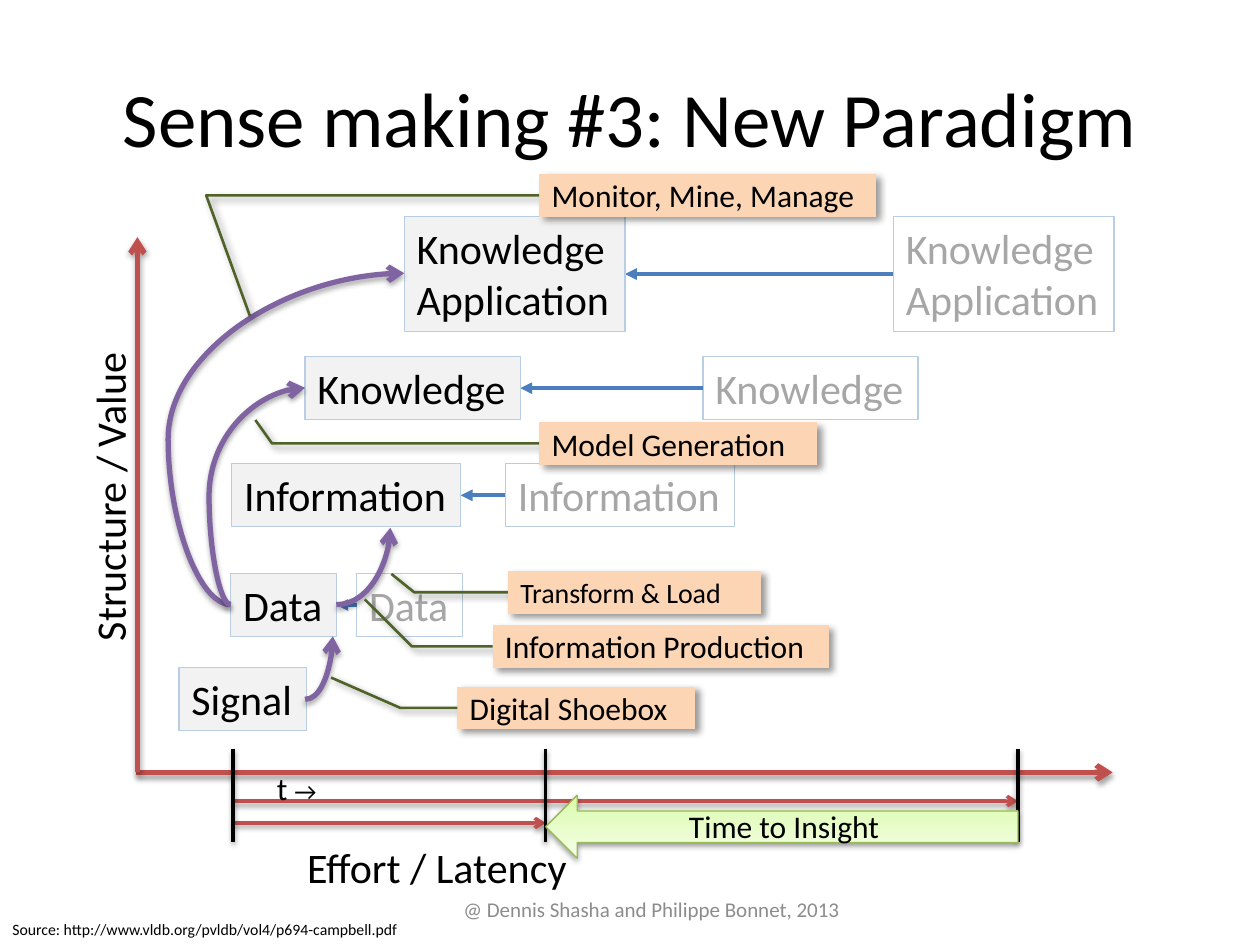
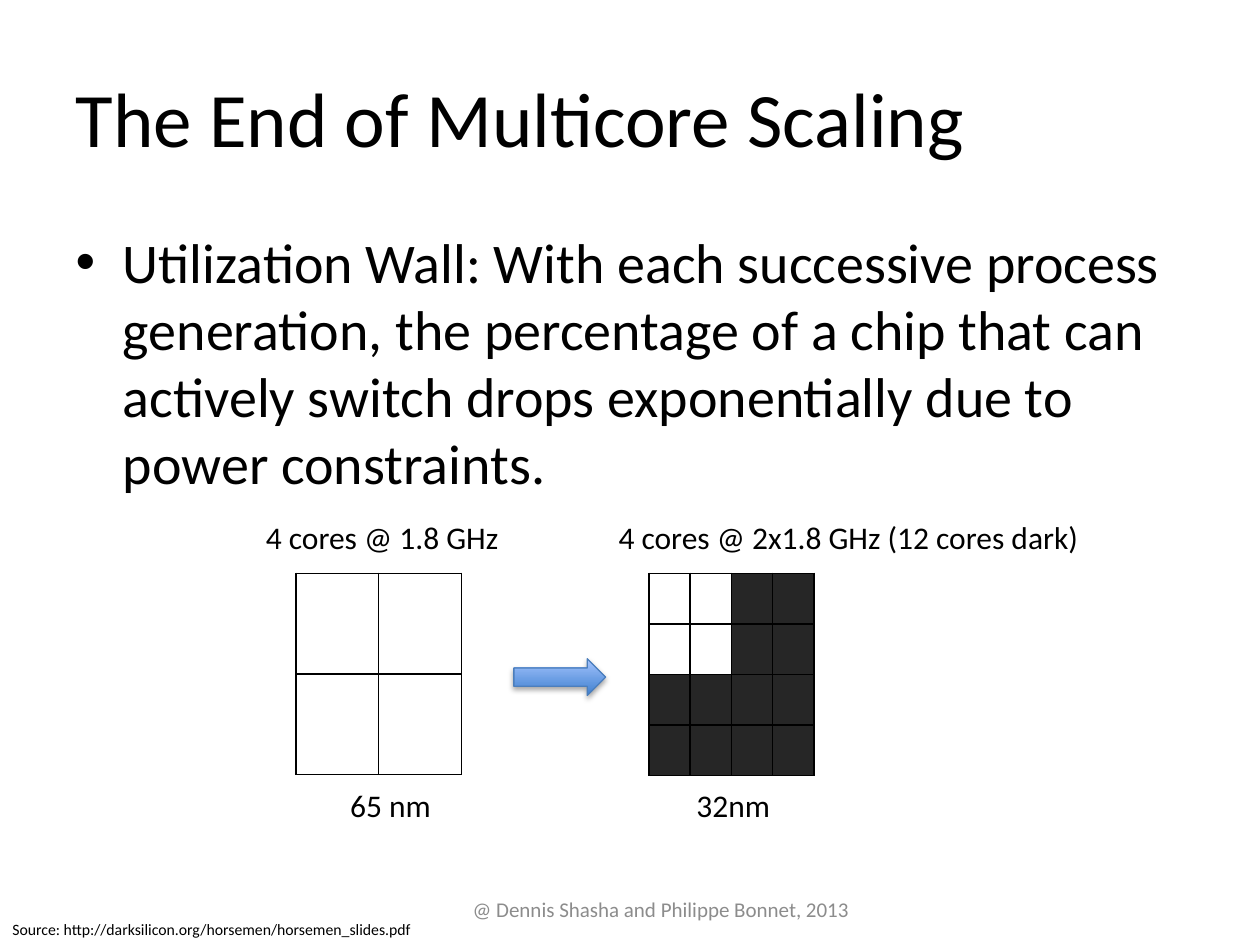
"""Build two slides: a sense making diagram and the end of multicore scaling."""
from copy import deepcopy
from typing import Any, NamedTuple, Optional

from lxml import etree
from pptx import Presentation
from pptx import util as u
from pptx.dml.color import RGBColor
from pptx.enum import shapes as s, text as t
from pptx.oxml.ns import qn

FONT = "Calibri"
BLACK = RGBColor(0x00, 0x00, 0x00)
GREY = RGBColor(0x8C, 0x8C, 0x8C)
FADED = RGBColor(0xA6, 0xA6, 0xA6)
PALE = RGBColor(0xF2, 0xF2, 0xF2)
EDGE = RGBColor(0xB9, 0xCD, 0xE5)
RED = RGBColor(0xC0, 0x50, 0x4D)
BLUE = RGBColor(0x4B, 0x7E, 0xBC)
PURPLE = RGBColor(0x80, 0x64, 0xA2)
PEACH = RGBColor(0xFC, 0xD5, 0xB5)
OLIVE = RGBColor(0x4F, 0x62, 0x28)
LEAF = RGBColor(0x98, 0xB9, 0x55)
DARK = RGBColor(0x26, 0x26, 0x26)
LIME = [(0, RGBColor(0xDA, 0xFD, 0xA7)), (0.35, RGBColor(0xE4, 0xFC, 0xC2)),
        (1, RGBColor(0xF5, 0xFF, 0xE7))]
SKY = [(0, RGBColor(0x3F, 0x80, 0xCE)), (1, RGBColor(0xA4, 0xC4, 0xFF))]

LEFT, MID = t.PP_ALIGN.LEFT, t.PP_ALIGN.CENTER
TOP, CENTRE = t.MSO_ANCHOR.TOP, t.MSO_ANCHOR.MIDDLE


class Box(NamedTuple):
    x: float
    y: float
    w: float
    h: float


class Shade(NamedTuple):
    alpha: int
    blur: float
    dist: float
    turn: int


class Stage(NamedTuple):
    text: str
    box: Box
    ghost: Optional[float] = None


class Line(NamedTuple):
    x1: float
    y1: float
    x2: float
    y2: float
    color: RGBColor
    width: float
    head: Optional[str] = None
    shade: Optional[Shade] = None
    curve: Optional[str] = None
    bend: Optional[float] = None


class Note(NamedTuple):
    text: str
    x: float
    y: float
    w: float
    elbow: float
    tip: tuple[float, float]
    size: int = 18


class Label(NamedTuple):
    text: str
    box: Box
    size: int = 18
    turn: int = 0


SOFT = Shade(35, 3.1, 1.8, 90)
FIRM = Shade(38, 3.1, 1.6, 90)
CAST = Shade(40, 4, 3, 45)

STAGES = [
    Stage("Signal", Box(3.61, 13.46, 2.57, 1.27)),
    Stage("Data", Box(4.65, 11.56, 2.13, 1.27), 7.19),
    Stage("Information", Box(4.67, 9.35, 4.62, 1.27), 10.19),
    Stage("Knowledge", Box(6.15, 7.19, 4.34, 1.27), 14.17),
    Stage("Knowledge\nApplication", Box(8.15, 4.37, 4.45, 2.31), 18.01),
]
START, NOW, END = 4.7, 11, 20.52
AXES = [
    Line(2.74, 15.57, 22.43, 15.57, RED, 3, "arrow", SOFT),
    Line(2.77, 15.57, 2.77, 4.78, RED, 3, "arrow", SOFT),
]
SPANS = [Line(START, y, x, y, RED, 2, "arrow", FIRM)
         for x, y in ((END, 16.15), (NOW, 16.59))]
TICKS = [Line(x, 15.09, x, 16.97, BLACK, 2, None, FIRM) for x in (START, NOW, END)]
CURVES = [Line(*ends, PURPLE, 3, "arrow", SOFT, kind, bend) for ends, kind, bend in (
    ((6.15, 14.1, 6.71, 12.83), "curvedConnector2", None),
    ((6.78, 12.19, 7.87, 10.64), "curvedConnector2", None),
    ((4.65, 12.19, 8.15, 5.51), "curvedConnector3", -0.36),
    ((4.65, 12.19, 6.15, 7.82), "curvedConnector3", -0.29),
)]
NOTES = [
    Note("Digital Shoebox", 9.22, 13.84, 4.8, -0.24, (-0.21, -0.53)),
    Note("Information Production", 9.93, 12.6, 6.78, -0.24, (-0.6, -0.38)),
    Note("Monitor, Mine, Manage", 10.87, 3.51, 6.78, -0.99, (3.33, -0.86)),
    Note("Transform & Load", 10.24, 11.51, 5.11, -0.37, (0.07, -0.46), 16),
    Note("Model Generation", 10.87, 8.51, 5.61, -0.96, (-0.05, -1.02)),
]
NAMES = [
    Label("Structure / Value", Box(-0.99, 9.35, 6.38, 1.27), 24, 270),
    Label("Effort / Latency", Box(5.94, 16.84, 5.82, 1.27), 24),
    Label("Time to Insight", Box(13.64, 16.15, 4.57, 1.02)),
]
CHIPS = [
    Label("65 nm", Box(6.81, 15.72, 2.16, 1.02)),
    Label("32nm", Box(13.79, 15.72, 2.01, 1.02)),
    Label("4 cores @ 1.8 GHz", Box(5.11, 10.31, 5.26, 1.02)),
    Label("4 cores @ 2x1.8 GHz (12 cores dark)", Box(12.22, 10.31, 9.91, 1.02)),
]


def put(item: Any, **form: Any) -> None:
    """Set each format value as an attribute of the item."""
    for key, val in form.items():
        setattr(item, key, val)


def place(box: Box) -> list[u.Length]:
    """Turn a box into lengths."""
    return [u.Cm(val) for val in box]


def write(item: Any, words: str, size: float, color: RGBColor = BLACK,
          align: Any = LEFT, anchor: Any = TOP, wrap: bool = False) -> None:
    """Fill a shape with formatted text, one paragraph a line."""
    frame = item.text_frame
    frame.text = words
    put(frame, word_wrap=wrap, vertical_anchor=anchor)
    for para in frame.paragraphs:
        para.alignment = align
        for run in para.runs:
            put(run.font, name=FONT, size=u.Pt(size))
            run.font.color.rgb = color


def cast(item: Any, shade: Optional[Shade]) -> None:
    """Replace the inherited shadow by the given one or by none."""
    effects = etree.SubElement(item.element.spPr, qn("a:effectLst"))
    if shade:
        outer = etree.SubElement(
            effects, qn("a:outerShdw"), blurRad=str(u.Pt(shade.blur)),
            dist=str(u.Pt(shade.dist)), dir=str(shade.turn * 60000), rotWithShape="0")
        color = etree.SubElement(outer, qn("a:srgbClr"), val=str(BLACK))
        etree.SubElement(color, qn("a:alpha"), val=str(shade.alpha * 1000))


def stroke(line: Any, color: RGBColor, width: float) -> None:
    """Colour a line and set its width."""
    line.color.rgb = color
    line.width = u.Pt(width)


def form(slide: Any, kind: Any, box: Box, fill: Any, edge: RGBColor,
         width: float = 0.75, shade: Optional[Shade] = None) -> Any:
    """Add a preset shape with a plain, graded or empty fill."""
    item = slide.shapes.add_shape(kind, *place(box))
    if fill is None:
        item.fill.background()
    elif isinstance(fill, list):
        item.fill.gradient()
        item.fill.gradient_angle = 90
        stops = item.element.spPr.find(".//" + qn("a:gsLst"))
        for _ in fill[2:]:
            stops.append(deepcopy(stops[-1]))
        for stop, (pos, color) in zip(item.fill.gradient_stops, fill):
            stop.position = pos
            stop.color.rgb = color
    else:
        item.fill.solid()
        item.fill.fore_color.rgb = fill
    stroke(item.line, edge, width)
    cast(item, shade)
    return item


def link(slide: Any, line: Line) -> None:
    """Add a straight or curved connector."""
    kind = s.MSO_CONNECTOR.CURVE if line.curve else s.MSO_CONNECTOR.STRAIGHT
    item = slide.shapes.add_connector(kind, *[u.Cm(val) for val in line[:4]])
    stroke(item.line, line.color, line.width)
    props = item.element.spPr
    if line.head:
        etree.SubElement(props.find(qn("a:ln")), qn("a:tailEnd"), type=line.head)
    if line.curve:
        shape = props.find(qn("a:prstGeom"))
        shape.set("prst", line.curve)
        if line.bend is not None:
            etree.SubElement(shape.find(qn("a:avLst")), qn("a:gd"), name="adj1",
                             fmla=f"val {round(line.bend * 100000)}")
    cast(item, line.shade)


def label(slide: Any, part: Label, **look: Any) -> Any:
    """Add a text box."""
    item = slide.shapes.add_textbox(*place(part.box))
    write(item, part.text, part.size, **look)
    item.rotation = part.turn
    return item


def stage(slide: Any, part: Stage) -> None:
    """Add a stage, its faded former place and the arrow between them."""
    box = part.box
    if part.ghost is not None:
        ghost = form(slide, s.MSO_SHAPE.RECTANGLE, box._replace(x=part.ghost), None, EDGE)
        write(ghost, part.text, 24, FADED)
        mid = box.y + box.h / 2
        link(slide, Line(part.ghost, mid, box.x + box.w, mid, BLUE, 2.25, "triangle"))
    write(form(slide, s.MSO_SHAPE.RECTANGLE, box, PALE, EDGE), part.text, 24)


def note(slide: Any, part: Note) -> None:
    """Add a callout with a bent leader."""
    item = form(slide, s.MSO_SHAPE.LINE_CALLOUT_2_NO_BORDER,
                Box(part.x, part.y, part.w, 0.86), PEACH, OLIVE, 1.5, CAST)
    for i, val in enumerate((0.5, 0, 0.5, part.elbow, *part.tip)):
        item.adjustments[i] = val
    write(item, part.text, part.size, anchor=CENTRE, wrap=True)


def chip(slide: Any, x: float, count: int, lit: int) -> None:
    """Add a square grid of cores, all dark beyond the lit corner."""
    box = Box(x, 11.56, 3.33, 4.06)
    grid = slide.shapes.add_table(count, count, *place(box)).table
    put(grid, first_row=False, horz_banding=False)
    for col in grid.columns:
        col.width = u.Cm(box.w / count)
    for r, row in enumerate(grid.rows):
        row.height = u.Cm(box.h / count)
        for c, cell in enumerate(row.cells):
            props = cell._tc.get_or_add_tcPr()
            for side in "LRTB":
                line = etree.SubElement(props, qn(f"a:ln{side}"), w=str(u.Pt(1)))
                fill = etree.SubElement(line, qn("a:solidFill"))
                etree.SubElement(fill, qn("a:srgbClr"), val=str(BLACK))
            if max(r, c) < lit:
                cell.fill.background()
            else:
                cell.fill.solid()
                cell.fill.fore_color.rgb = DARK


def start(deck: Any, layout: int, title: str, align: Any, source: str, width: float) -> Any:
    """Add a slide with its title, footer and source."""
    slide = deck.slides.add_slide(deck.slide_layouts[layout])
    head = slide.shapes.title
    put(head, **dict(zip(("left", "top", "width", "height"),
                         place(Box(1.27, 0.76, 22.86, 3.18)))))
    write(head, title, 44, align=align, anchor=CENTRE, wrap=True)
    label(slide, Label("@ Dennis Shasha and Philippe Bonnet, 2013",
                       Box(8.69, 17.88, width, 0.91), 12),
          color=GREY, align=MID, anchor=CENTRE, wrap=True)
    label(slide, Label(f"Source: {source}", Box(0, 18.41, 10.36, 0.63), 9), wrap=True)
    return slide


def sense(deck: Any) -> None:
    """Build the sense making diagram."""
    slide = start(deck, 5, "Sense making #3: New Paradigm", MID,
                  "http://www.vldb.org/pvldb/vol4/p694-campbell.pdf", 8.89)
    for line in AXES:
        link(slide, line)
    for part in STAGES:
        stage(slide, part)
    for line in SPANS + TICKS:
        link(slide, line)
    arrow = form(slide, s.MSO_SHAPE.RIGHT_ARROW, Box(NOW, 16.03, END - NOW, 1.27),
                 LIME, LEAF, shade=FIRM)
    arrow.rotation = 180
    for part in NAMES:
        label(slide, part)
    time = label(slide, Label("t ", Box(5.33, 15.37, 1.37, 1.02)))
    run = time.text_frame.paragraphs[0].add_run()
    run.text = "→"
    put(run.font, name=FONT, size=u.Pt(14))
    for line in CURVES:
        link(slide, line)
    for part in NOTES:
        note(slide, part)


def scaling(deck: Any) -> None:
    """Build the multicore slide."""
    slide = start(deck, 1, "The End of Multicore Scaling", LEFT,
                  "http://darksilicon.org/horsemen/horsemen_slides.pdf", 9.27)
    body = slide.placeholders[1]
    put(body, **dict(zip(("left", "top", "width", "height"),
                         place(Box(1.27, 4.45, 22.86, 12.57)))))
    write(body, "Utilization Wall: With each successive process generation, the "
          "percentage of a chip that can actively switch drops exponentially due to "
          "power constraints.", 32, wrap=True)
    chip(slide, 5.97, 2, 2)
    chip(slide, 13.08, 4, 2)
    form(slide, s.MSO_SHAPE.RIGHT_ARROW, Box(10.36, 13.28, 1.85, 0.74), SKY, BLUE, shade=SOFT)
    for part in CHIPS:
        label(slide, part)


def main() -> None:
    """Build and save the deck."""
    deck = Presentation()
    put(deck, slide_width=u.Cm(25.4), slide_height=u.Cm(19.05))
    sense(deck)
    scaling(deck)
    deck.save("out.pptx")


if __name__ == "__main__":
    main()
